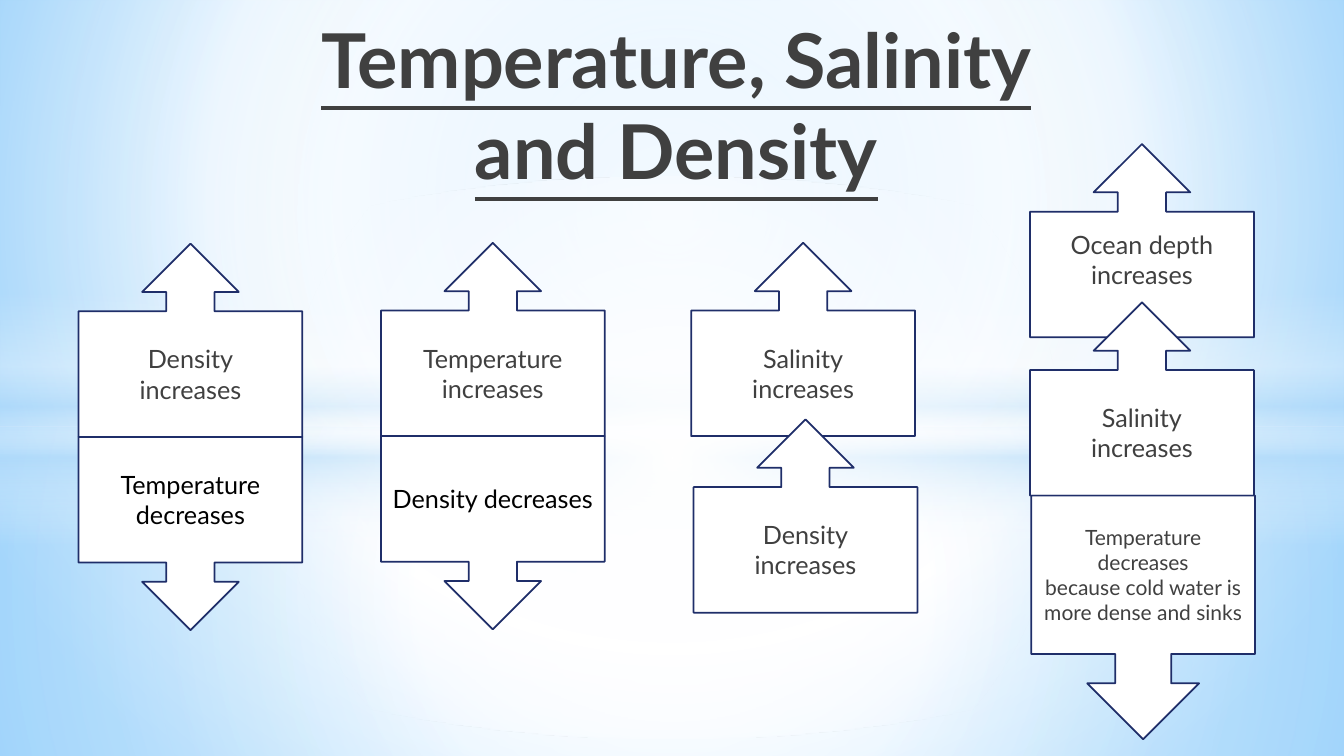
import pptx
import pptx.dml.color
import pptx.enum.shapes
import pptx.enum.text
import pptx.oxml
import pptx.oxml.ns
import pptx.util

Cm = pptx.util.Cm
Pt = pptx.util.Pt
SHAPES = pptx.enum.shapes.MSO_SHAPE
UP = SHAPES.UP_ARROW_CALLOUT
DOWN = SHAPES.DOWN_ARROW_CALLOUT

SLIDE_WIDTH, SLIDE_HEIGHT = 33.87, 19.05
CALLOUT_WIDTH, CALLOUT_HEIGHT = 5.64, 4.87
TALL_HEIGHT = 6.14
GREY, BLACK, WHITE, NAVY = "404040", "000000", "FFFFFF", "1F2E69"
SKY = "B4DCFA"

TITLE = "Temperature, Salinity\vand Density"
CENTRE = (50, 50, 50, 50)
BACKGROUND = ([(0, "9ED5FF", 100), (60, WHITE, 100), (100, "5BB9FF", 100)], (20, 10, 20, 60))
BACKDROP = [
    (SHAPES.RECTANGLE, 10.74, 8.31,
     [(0, WHITE, 91), (37, WHITE, 76), (100, SKY, 79)], CENTRE),
    (SHAPES.RECTANGLE, 0, 10.74,
     [(0, WHITE, 89), (48, WHITE, 62), (100, SKY, 79)], CENTRE),
    (SHAPES.RECTANGLE, 7.37, 6.35,
     [(0, WHITE, 0), (29, WHITE, 30), (45, SKY, 40), (55, WHITE, 26),
      (65, SKY, 60), (100, WHITE, 0)], None),
    (SHAPES.OVAL, 4.45, 14.17, [(0, WHITE, 100), (54, WHITE, 0)], CENTRE),
]

STANDARD = {"height": CALLOUT_HEIGHT, "size": 18, "color": GREY,
            "overlap": 0, "shift": 0, "bottom": 0.13}
COLUMNS = [
    (1.98, 6.14, [
        (UP, ["Density\vincreases"], {}),
        (DOWN, ["Temperature decreases"], {"color": BLACK}),
    ]),
    (9.6, 6.12, [
        (UP, ["Temperature\vincreases"], {}),
        (DOWN, ["Density decreases"], {"color": BLACK}),
    ]),
    (17.42, 6.12, [
        (UP, ["Salinity\vincreases"], {}),
        (UP, ["Density\vincreases"], {"overlap": 0.42, "shift": 0.06}),
    ]),
    (25.96, 3.63, [
        (UP, ["Ocean depth\vincreases"], {"bottom": 0.89}),
        (UP, ["Salinity\vincreases"], {"overlap": 0.88}),
        (DOWN, ["Temperature decreases", "because cold water is more dense and sinks"],
         {"height": TALL_HEIGHT, "size": 15, "shift": 0.03}),
    ]),
]


def rgb(value):
    return pptx.dml.color.RGBColor.from_string(value)


def apply(target, values):
    for name, value in values.items():
        setattr(target, name, value)


def gradient(stops, focus):
    stop_xml = "".join(
        f'<a:gs pos="{position * 1000}"><a:srgbClr val="{color}">'
        f'<a:alpha val="{opacity * 1000}"/></a:srgbClr></a:gs>'
        for position, color, opacity in stops)
    if focus:
        sides = " ".join(f'{side}="{share * 1000}"' for side, share in zip("ltrb", focus))
        direction = f'<a:path path="circle"><a:fillToRect {sides}/></a:path>'
    else:
        direction = '<a:lin ang="5400000" scaled="0"/>'
    return pptx.oxml.parse_xml(
        f'<a:gradFill {pptx.oxml.ns.nsdecls("a")} rotWithShape="1">'
        f'<a:gsLst>{stop_xml}</a:gsLst>{direction}</a:gradFill>')


def set_gradient(fill, owner, parent, stops, focus):
    fill.solid()
    solid = owner.xpath(f".//{parent}/a:solidFill")[0]
    solid.getparent().replace(solid, gradient(stops, focus))


def write(frame, paragraphs, font_values, color):
    for index, text in enumerate(paragraphs):
        paragraph = frame.paragraphs[0] if index == 0 else frame.add_paragraph()
        paragraph.text = text
        paragraph.alignment = pptx.enum.text.PP_ALIGN.CENTER
        for run in paragraph.runs:
            apply(run.font, font_values)
            run.font.color.rgb = rgb(color)


def add_backdrop(slide):
    set_gradient(slide.background.fill, slide.element, "p:bgPr", *BACKGROUND)
    for kind, top, height, stops, focus in BACKDROP:
        shape = slide.shapes.add_shape(kind, Cm(0), Cm(top), Cm(SLIDE_WIDTH), Cm(height))
        shape.shadow.inherit = False
        shape.line.fill.background()
        set_gradient(shape.fill, shape.element, "p:spPr", stops, focus)


def add_title(slide):
    title = slide.shapes.title
    apply(title, {"left": Cm(0.28), "top": Cm(0.2), "width": Cm(33.02), "height": Cm(4.45)})
    apply(title.text_frame, {
        "word_wrap": True, "auto_size": pptx.enum.text.MSO_AUTO_SIZE.NONE,
        "vertical_anchor": pptx.enum.text.MSO_ANCHOR.TOP, "margin_left": Cm(0.76)})
    write(title.text_frame, [TITLE],
          {"name": "Lato", "size": Pt(54), "bold": True, "underline": True}, GREY)
    slide.shapes._spTree.append(title.element)


def add_callout(slide, kind, left, top, paragraphs, style):
    callout = slide.shapes.add_shape(
        kind, Cm(left), Cm(top), Cm(CALLOUT_WIDTH), Cm(style["height"]))
    callout.shadow.inherit = False
    callout.fill.solid()
    callout.fill.fore_color.rgb = rgb(WHITE)
    callout.line.color.rgb = rgb(NAVY)
    callout.line.width = Pt(1.25)
    apply(callout.text_frame, {
        "word_wrap": True, "vertical_anchor": pptx.enum.text.MSO_ANCHOR.MIDDLE,
        "margin_bottom": Cm(style["bottom"])})
    write(callout.text_frame, paragraphs,
          {"name": "Lato", "size": Pt(style["size"])}, style["color"])


def main():
    presentation = pptx.Presentation()
    apply(presentation, {"slide_width": Cm(SLIDE_WIDTH), "slide_height": Cm(SLIDE_HEIGHT)})
    slide = presentation.slides.add_slide(presentation.slide_layouts[5])
    add_backdrop(slide)
    add_title(slide)
    for left, top, callouts in COLUMNS:
        for kind, paragraphs, changes in callouts:
            style = {**STANDARD, **changes}
            top -= style["overlap"]
            add_callout(slide, kind, left + style["shift"], top, paragraphs, style)
            top += style["height"]
    presentation.save("out.pptx")


if __name__ == "__main__":
    main()
